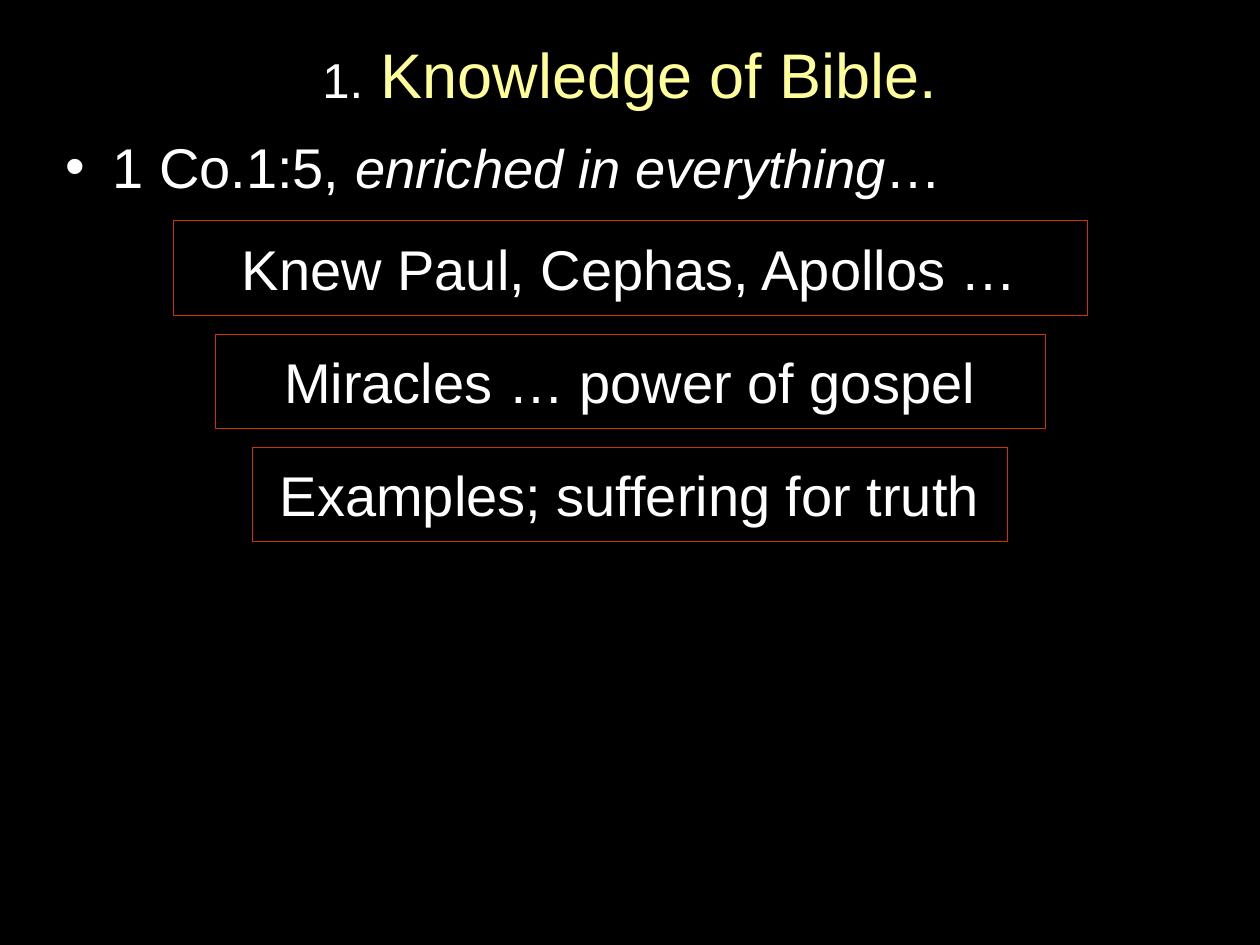
from pptx import Presentation
from pptx.dml.color import RGBColor
from pptx.enum.shapes import MSO_SHAPE
from pptx.enum.text import MSO_ANCHOR, PP_ALIGN
from pptx.util import Cm, Pt

BLACK = RGBColor(0x00, 0x00, 0x00)
WHITE = RGBColor(0xFF, 0xFF, 0xFF)
YELLOW = RGBColor(0xFF, 0xFF, 0x99)
RED = RGBColor(0xCC, 0x33, 0x00)

POINTS = [
    ("Knew Paul, Cephas, Apollos …", Cm(18.42)),
    ("Miracles … power of gospel", Cm(16.74)),
    ("Examples; suffering for truth", Cm(15.21)),
]


def format_run(run, size, color=WHITE, italic=False):
    run.font.name = "Arial"
    run.font.size = Pt(size)
    run.font.color.rgb = color
    run.font.italic = italic


def add_runs(paragraph, parts):
    for text, *style in parts:
        run = paragraph.add_run()
        run.text = text
        format_run(run, *style)


def place(shape, left, top, width, height):
    shape.left, shape.top = left, top
    shape.width, shape.height = width, height


def fill_title(title, left, top, width, height):
    place(title, left, top, width, height)
    title.text_frame.vertical_anchor = MSO_ANCHOR.MIDDLE
    paragraph = title.text_frame.paragraphs[0]
    paragraph.alignment = PP_ALIGN.CENTER
    add_runs(paragraph, [("1.", 28), (" Knowledge of Bible.", 36, YELLOW)])


def fill_verse(body, left, top, width, height):
    place(body, left, top, width, height)
    add_runs(body.text_frame.paragraphs[0], [
        ("1 Co.1:5, ", 32),
        ("enriched in everything", 31, WHITE, True),
        ("…", 32),
    ])


def add_points(slide, left, top, width, pitch, height):
    for row, (text, box_width) in enumerate(POINTS):
        shape = slide.shapes.add_shape(
            MSO_SHAPE.RECTANGLE, left + (width - box_width) // 2,
            top + row * pitch, box_width, height)
        shape.shadow.inherit = False
        shape.fill.solid()
        shape.fill.fore_color.rgb = BLACK
        shape.line.color.rgb = RED
        shape.line.width = Pt(0.25)
        shape.text_frame.text = text
        shape.text_frame.vertical_anchor = MSO_ANCHOR.MIDDLE
        paragraph = shape.text_frame.paragraphs[0]
        paragraph.alignment = PP_ALIGN.CENTER
        format_run(paragraph.runs[0], 32)


def main():
    presentation = Presentation()
    presentation.slide_width = Cm(25.4)
    presentation.slide_height = Cm(19.05)
    slide = presentation.slides.add_slide(presentation.slide_layouts[1])
    slide.background.fill.solid()
    slide.background.fill.fore_color.rgb = BLACK
    fill_title(slide.shapes.title, Cm(1.27), Cm(0), Cm(22.86), Cm(2.97))
    fill_verse(slide.placeholders[1], Cm(1.06), Cm(2.54), Cm(23.28), Cm(13.76))
    add_points(slide, Cm(0), Cm(4.45), Cm(25.4), Cm(2.28), Cm(1.91))
    presentation.save("out.pptx")


if __name__ == "__main__":
    main()
